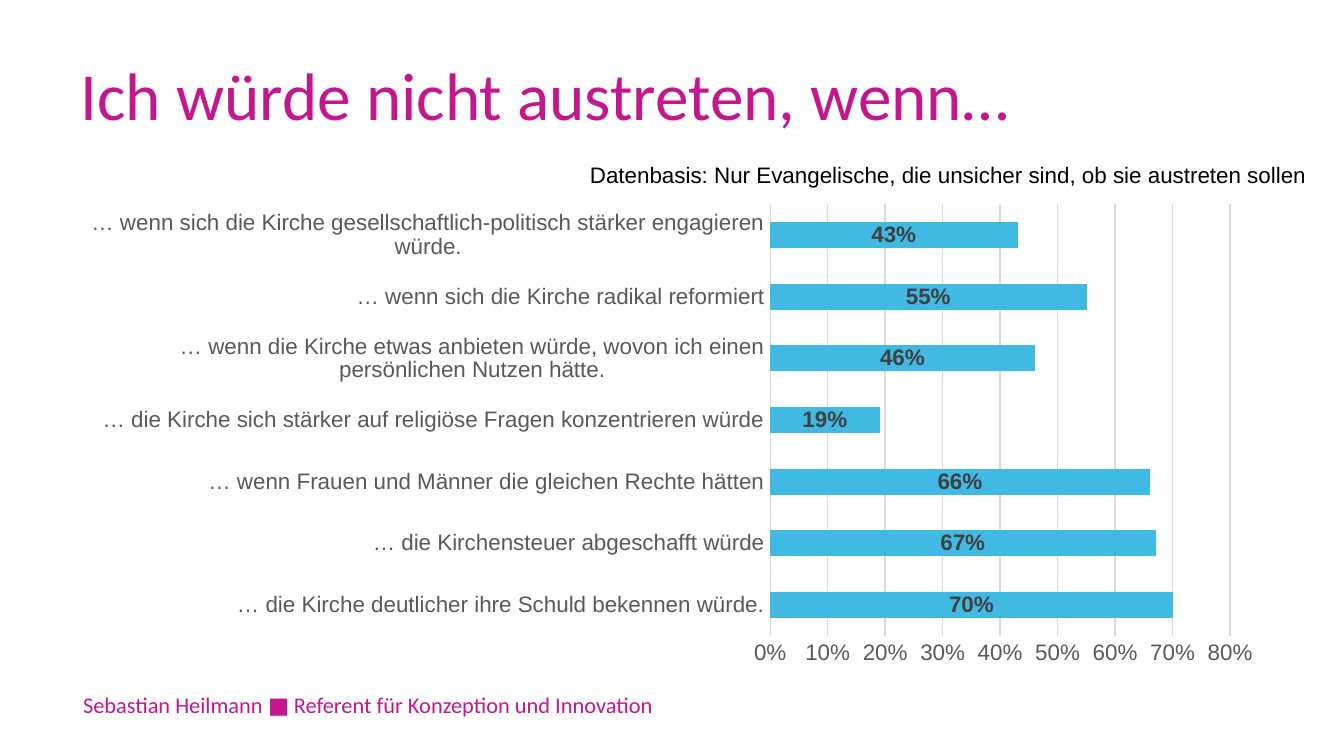
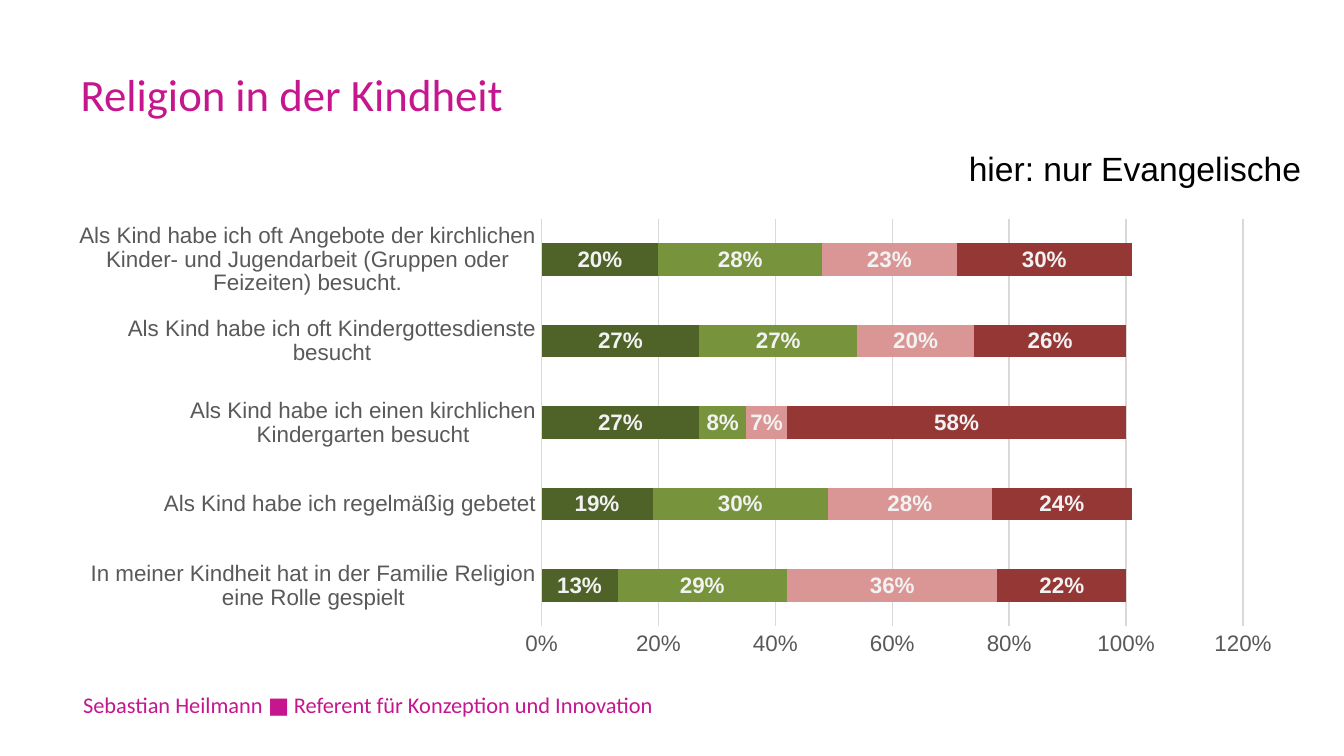
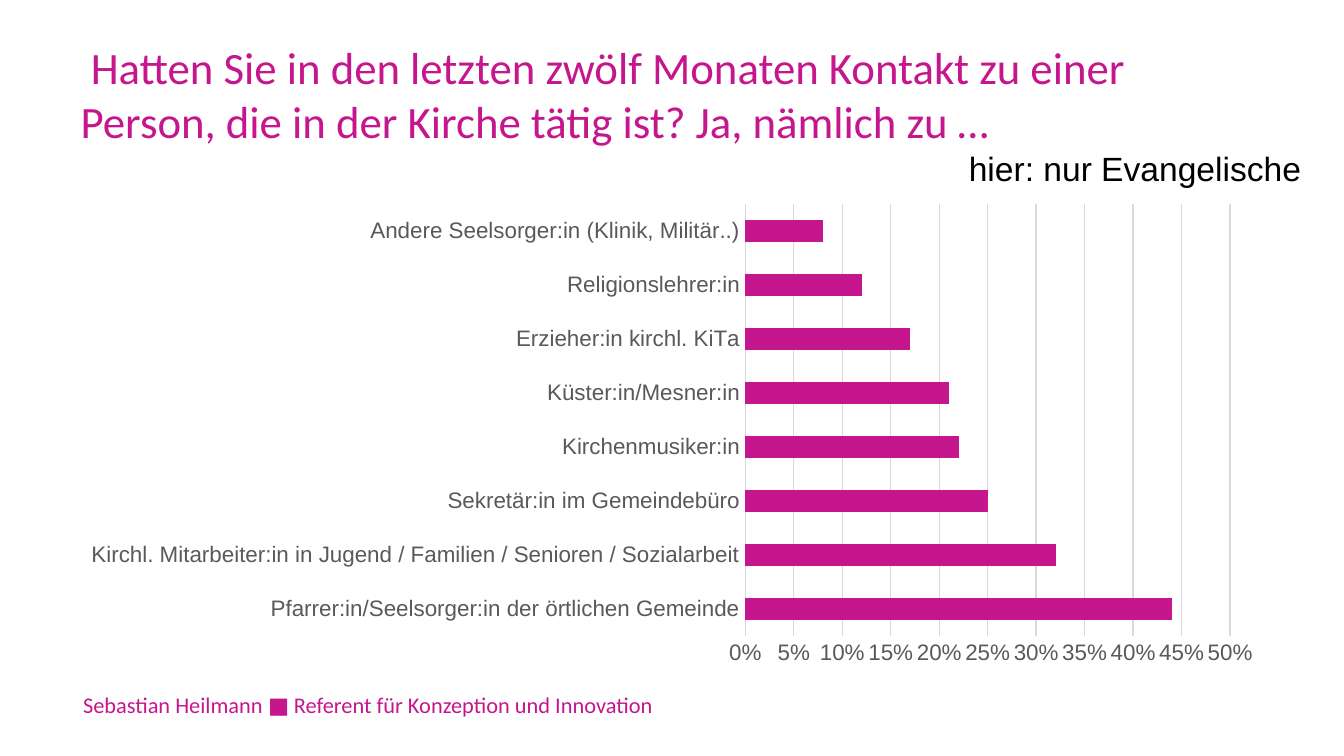
"""Builds three survey slides on church membership as native bar charts."""
from lxml import etree
from pptx import Presentation
from pptx.chart.data import CategoryChartData
from pptx.dml.color import RGBColor
from pptx.enum.chart import XL_CHART_TYPE, XL_LABEL_POSITION, XL_TICK_MARK
from pptx.enum.text import MSO_ANCHOR, MSO_AUTO_SIZE, PP_ALIGN
from pptx.oxml.ns import qn
from pptx.util import Cm, Pt

MAGENTA = RGBColor(0xC6, 0x16, 0x8D)
SKY = RGBColor(0x40, 0xB9, 0xE3)
DARK_GREEN = RGBColor(0x4F, 0x62, 0x28)
GREEN = RGBColor(0x77, 0x93, 0x3C)
ROSE = RGBColor(0xD9, 0x96, 0x94)
DARK_RED = RGBColor(0x95, 0x37, 0x35)
BLACK = RGBColor(0x00, 0x00, 0x00)
CHARCOAL = RGBColor(0x40, 0x40, 0x40)
AXIS_GRAY = RGBColor(0x59, 0x59, 0x59)
GRID_GRAY = RGBColor(0xD9, 0xD9, 0xD9)
PALE = RGBColor(0xF2, 0xF2, 0xF2)

HEADING_FONT = "Calibri"
BODY_FONT = "Arial"
PERCENT = "0%"
SPEAKER = "Sebastian Heilmann ■ Referent für Konzeption und Innovation"
PROTESTANTS_ONLY = "hier: nur Evangelische"


def style_font(font, name, size, color, bold=False):
    """Sets face, size, colour and weight of a font."""
    font.name = name
    font.size = Pt(size)
    font.bold = bold
    font.color.rgb = color


class SurveyDeck:
    """Holds the shared style and the slide being filled."""

    def __init__(self):
        """Opens an empty widescreen presentation."""
        self.presentation = Presentation()
        self.presentation.slide_width = Cm(25.4)
        self.presentation.slide_height = Cm(14.29)
        self.slide = None

    def start(self, question, size):
        """Adds a slide with its title and the speaker line."""
        self.slide = self.presentation.slides.add_slide(self.presentation.slide_layouts[5])
        heading = self.slide.shapes.title
        heading.left, heading.top = Cm(1.27), Cm(0.58)
        heading.width, heading.height = Cm(22.86), Cm(2.39)
        self.add_words(heading, question, HEADING_FONT, size, MAGENTA, MSO_ANCHOR.MIDDLE)
        speaker = self.slide.shapes.add_textbox(Cm(1.32), Cm(12.9), Cm(12.98), Cm(0.84))
        self.add_words(speaker, SPEAKER, HEADING_FONT, 12, MAGENTA, MSO_ANCHOR.MIDDLE)

    def add_words(self, holder, words, face, size, color, anchor=MSO_ANCHOR.TOP):
        """Puts one left-aligned run into a shape."""
        frame = holder.text_frame
        frame.word_wrap = True
        frame.auto_size = MSO_AUTO_SIZE.NONE
        frame.vertical_anchor = anchor
        line = frame.paragraphs[0]
        line.alignment = PP_ALIGN.LEFT
        run = line.add_run()
        run.text = words
        style_font(run.font, face, size, color)

    def sample_note(self, words, size, left, top, width, height):
        """Adds the remark on who was asked."""
        note = self.slide.shapes.add_textbox(Cm(left), Cm(top), Cm(width), Cm(height))
        self.add_words(note, words, BODY_FONT, size, BLACK)
        note.text_frame.auto_size = MSO_AUTO_SIZE.SHAPE_TO_FIT_TEXT

    def bars(self, answers, colors, maximum, step, left=1.27, label_color=None):
        """Adds a stacked bar chart of the share for each answer."""
        shares = CategoryChartData(number_format=PERCENT)
        shares.categories = list(answers)
        for number, values in enumerate(zip(*answers.values()), 1):
            shares.add_series(f"Series {number}", [value / 100 for value in values])
        chart = self.slide.shapes.add_chart(
            XL_CHART_TYPE.BAR_STACKED, Cm(left), Cm(3.68), Cm(22.86), Cm(9.07), shares
        ).chart
        style_font(chart.font, BODY_FONT, 10, BLACK)
        chart.has_legend = False
        chart.has_title = False
        plot = chart.plots[0]
        plot.gap_width, plot.overlap = 150, 100
        plot.vary_by_categories = False
        for series, color in zip(plot.series, colors):
            series.format.fill.solid()
            series.format.fill.fore_color.rgb = color
            if label_color is not None:
                self.label(series, label_color)
        self.axes(chart, maximum, step)
        return chart

    def label(self, series, color):
        """Shows the percentages inside the bars."""
        labels = series.data_labels
        labels.show_value = True
        labels.number_format = PERCENT
        labels.number_format_is_linked = False
        labels.position = XL_LABEL_POSITION.CENTER
        style_font(labels.font, BODY_FONT, 12, color, bold=True)

    def axes(self, chart, maximum, step):
        """Formats the answer axis and the percentage axis."""
        for axis in (chart.category_axis, chart.value_axis):
            axis.major_tick_mark = axis.minor_tick_mark = XL_TICK_MARK.NONE
            style_font(axis.tick_labels.font, BODY_FONT, 12, AXIS_GRAY)
        percentages = chart.value_axis
        percentages.minimum_scale, percentages.maximum_scale = 0, maximum
        percentages.major_unit = step
        percentages.tick_labels.number_format = PERCENT
        percentages.tick_labels.number_format_is_linked = False
        percentages.format.line.fill.background()
        percentages.has_major_gridlines = True
        for line in (chart.category_axis.format.line, percentages.major_gridlines.format.line):
            line.color.rgb = GRID_GRAY
            line.width = Pt(0.75)

    def place_plot(self, chart, x, y, w, h):
        """Fixes the inner plot area as fractions of the chart."""
        area = chart.element.find(".//" + qn("c:plotArea"))
        for automatic in area.findall(qn("c:layout")):
            area.remove(automatic)
        layout = etree.Element(qn("c:layout"))
        area.insert(0, layout)
        manual = etree.SubElement(layout, qn("c:manualLayout"))
        settings = {"layoutTarget": "inner", "xMode": "edge", "yMode": "edge",
                    "x": x, "y": y, "w": w, "h": h}
        for tag, value in settings.items():
            etree.SubElement(manual, qn(f"c:{tag}")).set("val", str(value))


def staying_slide(deck):
    """Shows what would keep undecided members."""
    deck.start("Ich würde nicht austreten, wenn…", 36)
    chart = deck.bars({
        "… die Kirche deutlicher ihre Schuld bekennen würde.": [70],
        "… die Kirchensteuer abgeschafft würde": [67],
        "… wenn Frauen und Männer die gleichen Rechte hätten": [66],
        "… die Kirche sich stärker auf religiöse Fragen konzentrieren würde": [19],
        "… wenn die Kirche etwas anbieten würde, wovon ich einen persönlichen Nutzen hätte.": [46],
        "… wenn sich die Kirche radikal reformiert": [55],
        "… wenn sich die Kirche gesellschaftlich-politisch stärker engagieren würde.": [43],
    }, [SKY], 0.8, 0.1, label_color=CHARCOAL)
    outline = chart.plots[0].series[0].format.line
    outline.color.rgb = SKY
    outline.width = Pt(0.75)
    deck.sample_note("Datenbasis: Nur Evangelische, die unsicher sind, ob sie austreten sollen",
                     12, 10.9, 2.92, 21.51, 0.76)


def childhood_slide(deck):
    """Shows religious experience in childhood."""
    deck.start("Religion in der Kindheit", 24)
    chart = deck.bars({
        "In meiner Kindheit hat in der Familie Religion eine Rolle gespielt": [13, 29, 36, 22],
        "Als Kind habe ich regelmäßig gebetet": [19, 30, 28, 24],
        "Als Kind habe ich einen kirchlichen Kindergarten besucht": [27, 8, 7, 58],
        "Als Kind habe ich oft Kindergottesdienste besucht": [27, 27, 20, 26],
        "Als Kind habe ich oft Angebote der kirchlichen Kinder- und Jugendarbeit "
        "(Gruppen oder Feizeiten) besucht.": [20, 28, 23, 30],
    }, [DARK_GREEN, GREEN, ROSE, DARK_RED], 1.2, 0.2, left=1.32, label_color=PALE)
    deck.place_plot(chart, 0.39, 0.05, 0.58, 0.85)
    deck.sample_note(PROTESTANTS_ONLY, 18, 18.06, 2.67, 8, 1.02)


def contact_slide(deck):
    """Shows which church staff people have met."""
    deck.start(" Hatten Sie in den letzten zwölf Monaten Kontakt zu einer Person, "
               "die in der Kirche tätig ist? Ja, nämlich zu …", 24)
    deck.bars({
        "Pfarrer:in/Seelsorger:in der örtlichen Gemeinde": [44],
        "Kirchl. Mitarbeiter:in in Jugend / Familien / Senioren / Sozialarbeit": [32],
        "Sekretär:in im Gemeindebüro": [25],
        "Kirchenmusiker:in": [22],
        "Küster:in/Mesner:in": [21],
        "Erzieher:in kirchl. KiTa": [17],
        "Religionslehrer:in": [12],
        "Andere Seelsorger:in (Klinik, Militär..)": [8],
    }, [MAGENTA], 0.5, 0.05)
    deck.sample_note(PROTESTANTS_ONLY, 18, 18.06, 2.67, 8, 1.02)


def main():
    """Builds and saves the presentation."""
    deck = SurveyDeck()
    staying_slide(deck)
    childhood_slide(deck)
    contact_slide(deck)
    deck.presentation.save("out.pptx")


if __name__ == "__main__":
    main()
